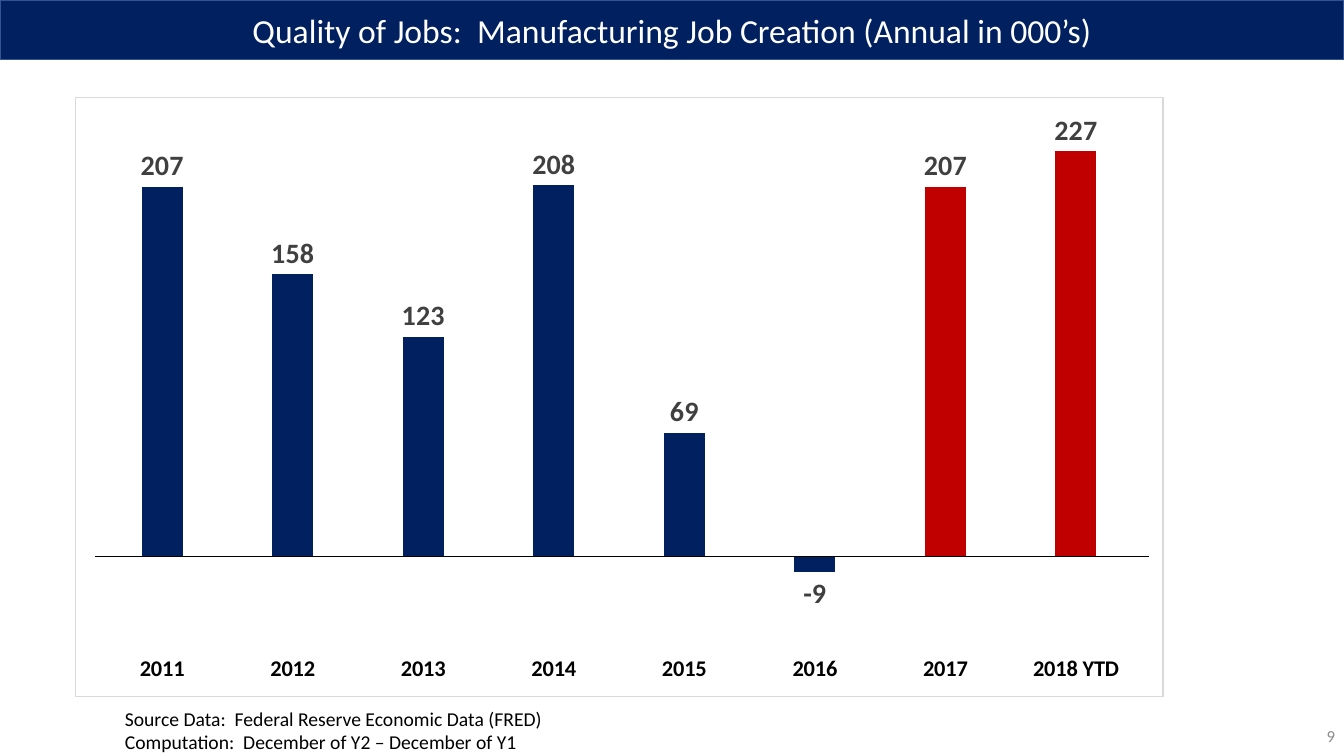
from lxml import etree
from pptx import Presentation
from pptx.chart.data import CategoryChartData
from pptx.dml.color import RGBColor
from pptx.enum.chart import XL_CHART_TYPE, XL_LABEL_POSITION, XL_TICK_LABEL_POSITION, XL_TICK_MARK
from pptx.enum.shapes import MSO_CONNECTOR, MSO_SHAPE
from pptx.enum.text import MSO_ANCHOR, PP_ALIGN
from pptx.oxml import parse_xml
from pptx.oxml.ns import nsdecls, qn
from pptx.util import Inches, Pt

COLUMNS = XL_CHART_TYPE.COLUMN_CLUSTERED
OUTSIDE_END = XL_LABEL_POSITION.OUTSIDE_END
LABELS_LOW = XL_TICK_LABEL_POSITION.LOW
NO_TICK = XL_TICK_MARK.NONE
STRAIGHT = MSO_CONNECTOR.STRAIGHT
RECTANGLE = MSO_SHAPE.RECTANGLE
TOP, MIDDLE = MSO_ANCHOR.TOP, MSO_ANCHOR.MIDDLE
LEFT, CENTER, RIGHT = PP_ALIGN.LEFT, PP_ALIGN.CENTER, PP_ALIGN.RIGHT

FONT = "Calibri"
COLORS = {
    "navy": "002060", "navy_edge": "325491", "red": "C00000", "white": "FFFFFF",
    "black": "000000", "label": "404040", "number": "8C8C8C", "rule": "D9D9D9",
}
JOBS = {
    "2011": 207, "2012": 158, "2013": 123, "2014": 208,
    "2015": 69, "2016": -9, "2017": 207, "2018 YTD": 227,
}
HIGHLIGHTED_YEARS = ("2017", "2018 YTD")
AXIS_MINIMUM, AXIS_MAXIMUM = -50, 250
PLOT_LAYOUT = {"x": 0.02, "y": 0.022, "w": 0.96, "h": 0.892}


def color(name):
    return RGBColor.from_string(COLORS[name])


def fill_solid(fill, color_name):
    fill.solid()
    fill.fore_color.rgb = color(color_name)


def style_line(line, color_name, width):
    line.color.rgb = color(color_name)
    line.width = Pt(width)


def style_font(font, size, color_name, bold=False):
    values = {"name": FONT, "size": Pt(size), "bold": bold}
    for attribute, value in values.items():
        setattr(font, attribute, value)
    font.color.rgb = color(color_name)


def write_text(shape, lines, size, color_name, alignment, anchor, wrap=True):
    frame = shape.text_frame
    frame.word_wrap = wrap
    frame.vertical_anchor = anchor
    frame.text = "\n".join(lines)
    for paragraph in frame.paragraphs:
        paragraph.alignment = alignment
        style_font(paragraph.runs[0].font, size, color_name)


def add_title_band(slide, box):
    band = slide.shapes.add_shape(RECTANGLE, *map(Inches, box))
    band.shadow.inherit = False
    fill_solid(band.fill, "navy")
    style_line(band.line, "navy_edge", 1)
    title = "Quality of Jobs:  Manufacturing Job Creation (Annual in 000’s)"
    write_text(band, [title], 24, "white", CENTER, MIDDLE)


def add_page_number(slide, box):
    number = slide.shapes.add_textbox(*map(Inches, box))
    write_text(number, ["9"], 12, "number", RIGHT, MIDDLE)


def add_source_note(slide, box):
    note = slide.shapes.add_textbox(*map(Inches, box))
    lines = [
        "Source Data:  Federal Reserve Economic Data (FRED)",
        "Computation:  December of Y2 – December of Y1",
    ]
    write_text(note, lines, 14, "black", LEFT, TOP, wrap=False)


def frame_chart(chart):
    """Give the chart area its white fill and thin border."""
    chart.element.find(qn("c:chart")).addnext(parse_xml(
        f'<c:spPr {nsdecls("c", "a")}>'
        f'<a:solidFill><a:srgbClr val="{COLORS["white"]}"/></a:solidFill>'
        f'<a:ln w="{Pt(0.75)}"><a:solidFill><a:srgbClr val="{COLORS["rule"]}"/>'
        '</a:solidFill></a:ln></c:spPr>'))


def place_plot(chart):
    """Fix the inner plot area as fractions of the chart."""
    plot_area = chart.element.find(qn("c:chart")).find(qn("c:plotArea"))
    for old_layout in plot_area.findall(qn("c:layout")):
        plot_area.remove(old_layout)
    layout = etree.Element(qn("c:layout"))
    manual = etree.SubElement(layout, qn("c:manualLayout"))
    settings = {"layoutTarget": "inner", "xMode": "edge", "yMode": "edge", **PLOT_LAYOUT}
    for tag, value in settings.items():
        etree.SubElement(manual, qn(f"c:{tag}")).set("val", str(value))
    plot_area.insert(0, layout)


def style_axes(chart):
    years = chart.category_axis
    years.tick_label_position = LABELS_LOW
    years.major_tick_mark = NO_TICK
    style_font(years.tick_labels.font, 16, "black", bold=True)
    style_line(years.format.line, "rule", 0.75)
    values = {
        "visible": False, "has_major_gridlines": False,
        "minimum_scale": AXIS_MINIMUM, "maximum_scale": AXIS_MAXIMUM,
    }
    for attribute, value in values.items():
        setattr(chart.value_axis, attribute, value)


def style_columns(plot):
    plot.gap_width = 219
    plot.overlap = -27
    plot.vary_by_categories = False
    series = plot.series[0]
    series.invert_if_negative = False
    fill_solid(series.format.fill, "navy")
    for index, year in enumerate(JOBS):
        if year in HIGHLIGHTED_YEARS:
            fill_solid(series.points[index].format.fill, "red")
    labels = series.data_labels
    values = {
        "show_value": True, "position": OUTSIDE_END,
        "number_format": "0", "number_format_is_linked": False,
    }
    for attribute, value in values.items():
        setattr(labels, attribute, value)
    style_font(labels.font, 20, "label", bold=True)


def add_jobs_chart(slide, box):
    data = CategoryChartData(number_format="0")
    data.categories = list(JOBS)
    data.add_series("Series 1", list(JOBS.values()))
    chart = slide.shapes.add_chart(COLUMNS, *map(Inches, box), data).chart
    chart.has_legend = False
    chart.has_title = False
    style_font(chart.font, 10, "black")
    style_axes(chart)
    style_columns(chart.plots[0])
    place_plot(chart)
    frame_chart(chart)
    add_zero_line(slide, box)


def add_zero_line(slide, box):
    """Draw the baseline across the chart at the value zero."""
    left, top, width, height = box
    zero_share = AXIS_MAXIMUM / (AXIS_MAXIMUM - AXIS_MINIMUM)
    zero = top + height * (PLOT_LAYOUT["y"] + PLOT_LAYOUT["h"] * zero_share)
    ends = (left + 0.2, zero, left + width - 0.14, zero)
    line = slide.shapes.add_connector(STRAIGHT, *map(Inches, ends))
    style_line(line.line, "black", 1)
    etree.SubElement(line.element.spPr, qn("a:effectLst"))


def main():
    presentation = Presentation()
    presentation.slide_width = Inches(13.33)
    presentation.slide_height = Inches(7.5)
    slide = presentation.slides.add_slide(presentation.slide_layouts[6])
    fill_solid(slide.background.fill, "white")
    add_title_band(slide, (0, 0, 13.33, 0.59))
    add_page_number(slide, (10.34, 7.1, 3, 0.4))
    add_source_note(slide, (1.14, 6.96, 4.37, 0.57))
    add_jobs_chart(slide, (0.74, 0.96, 10.8, 5.96))
    presentation.save("out.pptx")


if __name__ == "__main__":
    main()
